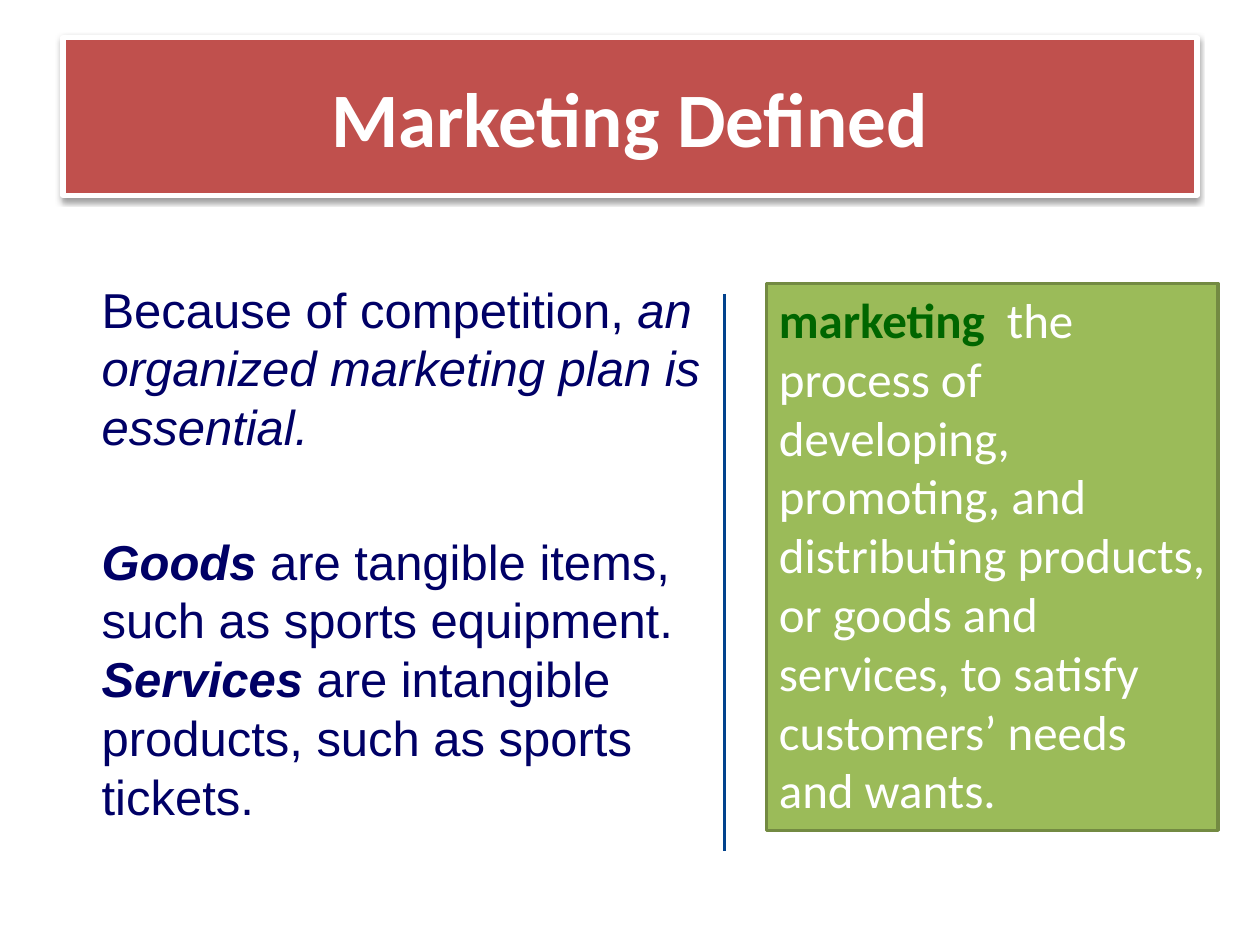
from lxml.etree import SubElement
from pptx import Presentation
from pptx.dml.color import RGBColor
from pptx.enum.shapes import MSO_CONNECTOR, MSO_SHAPE
from pptx.enum.text import MSO_ANCHOR, PP_ALIGN
from pptx.oxml.ns import qn
from pptx.util import Pt

# Content: runs are (text, style), where style holds "b" and/or "i"
TITLE = [("Marketing Defined", "b")]
STATEMENTS = [
    [("Because of competition, ", ""),
     ("an organized marketing plan is essential.", "i")],
    [("Goods", "bi"),
     (" are tangible items, such as sports equipment. ", ""),
     ("Services", "bi"),
     (" are intangible products, such as sports tickets.", "")],
]
DEFINITION = [
    ("marketing  ", "b"),
    ("the process of developing, promoting, and distributing products, "
     "or goods and services, to satisfy customers’ needs and wants.", ""),
]

THEME = {
    "title_fill": "C0504D", "white": "FFFFFF", "navy": "000066",
    "divider": "01428D", "green": "9BBB59", "green_edge": "738A42",
    "term": "006600", "shadow": "000000",
    "heading_font": "Calibri", "body_font": "Arial",
    "title_size": 44, "body_size": 28, "line_pitch": 33.6,
}

# Layout in points: left, top, width, height
TITLE_BOX = (36, 21.6, 648, 90)
STATEMENT_BOXES = [(42, 156, 366, 126), (42, 300, 366, 192)]
DEFINITION_BOX = (438, 162, 258, 312.5)
DIVIDER = (414, 168, 414, 486)
STATEMENT_INDENT = 9


def color(name):
    return RGBColor.from_string(THEME[name])


def write(shape, runs, font, size, colors):
    """Fill a shape with one paragraph; colors gives one name per run."""
    frame = shape.text_frame
    frame.word_wrap = True
    paragraph = frame.paragraphs[0]
    for (text, style), color_name in zip(runs, colors):
        run = paragraph.add_run()
        run.text = text
        run.font.name = THEME[font]
        run.font.size = Pt(THEME[size])
        run.font.bold = "b" in style
        run.font.italic = "i" in style
        run.font.color.rgb = color(color_name)
    return paragraph


def add_panel(slide, box, fill, edge, edge_width):
    shape = slide.shapes.add_shape(MSO_SHAPE.RECTANGLE, *map(Pt, box))
    shape.shadow.inherit = False
    shape.fill.solid()
    shape.fill.fore_color.rgb = color(fill)
    shape.line.color.rgb = color(edge)
    shape.line.width = Pt(edge_width)
    return shape


def add_drop_shadow(shape):
    effects = shape._element.spPr.find(qn("a:effectLst"))
    shadow = SubElement(effects, qn("a:outerShdw"), blurRad=str(Pt(3.1)),
                        dist=str(Pt(1.6)), dir="5400000", rotWithShape="0")
    tint = SubElement(shadow, qn("a:srgbClr"), val=THEME["shadow"])
    SubElement(tint, qn("a:alpha"), val="38000")


def main():
    presentation = Presentation()
    presentation.slide_width, presentation.slide_height = Pt(720), Pt(540)
    slide = presentation.slides.add_slide(presentation.slide_layouts[6])

    # Title banner
    banner = add_panel(slide, TITLE_BOX, "title_fill", "white", 3)
    add_drop_shadow(banner)
    banner.text_frame.vertical_anchor = MSO_ANCHOR.MIDDLE
    paragraph = write(banner, TITLE, "heading_font", "title_size", ["white"])
    paragraph.alignment = PP_ALIGN.CENTER

    # Statements on the left
    for box, runs in zip(STATEMENT_BOXES, STATEMENTS):
        statement = slide.shapes.add_textbox(*map(Pt, box))
        paragraph = write(statement, runs, "body_font", "body_size",
                          ["navy"] * len(runs))
        paragraph.line_spacing = Pt(THEME["line_pitch"])
        paragraph._p.get_or_add_pPr().set("marL", str(Pt(STATEMENT_INDENT)))

    # Divider
    divider = slide.shapes.add_connector(MSO_CONNECTOR.STRAIGHT, *map(Pt, DIVIDER))
    divider.line.color.rgb = color("divider")
    divider.line.width = Pt(2.25)
    SubElement(divider._element.spPr, qn("a:effectLst"))

    # Definition panel on the right
    panel = add_panel(slide, DEFINITION_BOX, "green", "green_edge", 2)
    panel.text_frame.vertical_anchor = MSO_ANCHOR.TOP
    paragraph = write(panel, DEFINITION, "heading_font", "body_size",
                      ["term", "white"])
    paragraph.alignment = PP_ALIGN.LEFT
    paragraph.line_spacing = Pt(THEME["line_pitch"])

    presentation.save("out.pptx")


if __name__ == "__main__":
    main()
